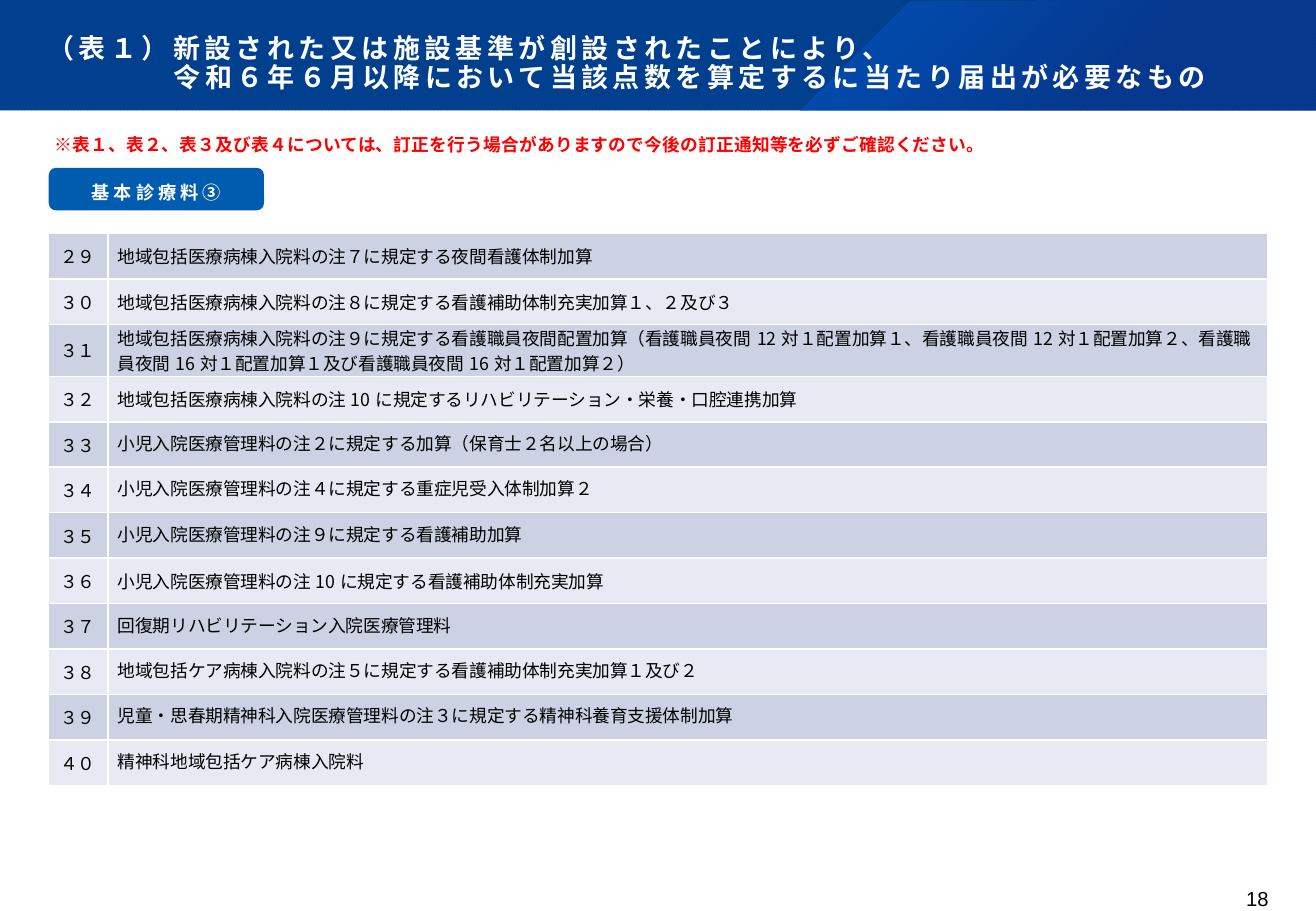
from lxml.etree import SubElement
from pptx import Presentation
from pptx.dml.color import RGBColor
from pptx.enum.dml import MSO_PATTERN
from pptx.enum.shapes import MSO_SHAPE
from pptx.enum.text import MSO_ANCHOR, MSO_AUTO_SIZE, PP_ALIGN
from pptx.oxml import parse_xml
from pptx.oxml.ns import nsdecls, qn
from pptx.util import Cm, Pt

WHITE = RGBColor(0xFF, 0xFF, 0xFF)
BLACK = RGBColor(0, 0, 0)
RED = RGBColor(0xFF, 0, 0)
BAND_DARK = RGBColor(0x00, 0x35, 0x79)
BAND_BLUE = RGBColor(0x00, 0x42, 0x92)
LABEL_BLUE = RGBColor(0x00, 0x5C, 0xAF)
ROW_FILLS = (RGBColor(0xCC, 0xD2, 0xE3), RGBColor(0xE7, 0xEA, 0xF2))

NOTO = "Noto Sans CJK JP"
KARLA = "Karla"
WIDTH, HEIGHT, BAND_HEIGHT = Cm(27.51), Cm(19.05), Cm(2.31)

FIRST_NUMBER = 29
LINE_CAPACITY = 65
WIDE_DIGITS = str.maketrans("0123456789", "０１２３４５６７８９")
ITEMS = [
    [("地域包括医療病棟入院料の注７に規定する夜間看護体制加算", NOTO)],
    [("地域包括医療病棟入院料の注８に規定する看護補助体制充実加算１、２及び３", NOTO)],
    [("地域包括医療病棟入院料の注９に規定する看護職員夜間配置加算"
      "（看護職員夜間12対１配置加算１、看護職員夜間12対１配置加算２、"
      "看護職員夜間16対１配置加算１及び看護職員夜間16対１配置加算２）", NOTO)],
    [("地域包括医療病棟入院料の注", KARLA), ("10", NOTO),
     ("に規定するリハビリテーション・栄養・口腔連携加算", KARLA)],
    [("小児入院医療管理料の注２に規定する加算（保育士２名以上の場合）", KARLA)],
    [("小児入院医療管理料の注４に規定する重症児受入体制加算２", KARLA)],
    [("小児入院医療管理料の注９に規定する看護補助加算", KARLA)],
    [("小児入院医療管理料の注", KARLA), ("10", NOTO),
     ("に規定する看護補助体制充実加算", KARLA)],
    [("回復期リハビリテーション入院医療管理料", KARLA)],
    [("地域包括ケア病棟入院料の注５に規定する看護補助体制充実加算１及び２", KARLA)],
    [("児童・思春期精神科入院医療管理料の注３に規定する精神科養育支援体制加算", KARLA)],
    [("精神科地域包括ケア病棟入院料", KARLA)],
]


def add_run(paragraph, text, size, face, color, bold=False, spacing=0):
    run = paragraph.add_run()
    run.text = text
    font = run.font
    font.size, font.name, font.bold = Pt(size), face, bold
    font.color.rgb = color
    properties = run._r.get_or_add_rPr()
    SubElement(properties, qn("a:ea")).set("typeface", face)
    if spacing:
        properties.set("spc", str(round(spacing * 100)))


def set_margins(frame, left, top, right, bottom):
    frame.margin_left, frame.margin_top = Cm(left), Cm(top)
    frame.margin_right, frame.margin_bottom = Cm(right), Cm(bottom)


def add_band(slide):
    band = slide.shapes.add_shape(MSO_SHAPE.RECTANGLE, 0, 0, WIDTH, BAND_HEIGHT)
    band.shadow.inherit = False
    band.fill.patterned()
    band.fill.pattern = MSO_PATTERN.DARK_UPWARD_DIAGONAL
    band.fill.fore_color.rgb = BAND_DARK
    band.fill.back_color.rgb = BAND_BLUE
    band.line.fill.background()

    outline = slide.shapes.build_freeform(Cm(19.02), Cm(0.03))
    outline.add_line_segments(
        [(WIDTH, 0), (WIDTH, BAND_HEIGHT), (Cm(16.71), BAND_HEIGHT)], close=True)
    glow = outline.convert_to_shape()
    glow.shadow.inherit = False
    glow.line.fill.background()
    gradient = parse_xml(
        f'<a:gradFill {nsdecls("a")} rotWithShape="1"><a:gsLst>'
        '<a:gs pos="0"><a:srgbClr val="0064DF"><a:alpha val="50000"/></a:srgbClr></a:gs>'
        '<a:gs pos="62000"><a:srgbClr val="0C338E"><a:alpha val="55000"/></a:srgbClr></a:gs>'
        '</a:gsLst><a:path path="circle"><a:fillToRect r="100000" b="100000"/></a:path>'
        '</a:gradFill>')
    glow._element.spPr.find(qn("a:custGeom")).addnext(gradient)


def place_title(slide):
    title = slide.shapes.title
    slide.shapes._spTree.append(title._element)
    title.left, title.top, title.width, title.height = 0, 0, WIDTH, BAND_HEIGHT
    frame = title.text_frame
    frame.auto_size = MSO_AUTO_SIZE.NONE
    frame.word_wrap = True
    frame.vertical_anchor = MSO_ANCHOR.BOTTOM
    set_margins(frame, 0.99, 0.91, 0.91, 0.36)
    paragraph = frame.paragraphs[0]
    paragraph.alignment = PP_ALIGN.LEFT
    paragraph.line_spacing = 0.9
    hanging = Cm(2.64)
    properties = paragraph._p.get_or_add_pPr()
    properties.set("marL", str(hanging))
    properties.set("indent", str(-hanging))
    style = (16, KARLA, WHITE, True, 2.7)
    add_run(paragraph, "（表１）新設された又は施設基準が創設されたことにより、", *style)
    paragraph.add_line_break()
    add_run(paragraph, "令和６年６月以降において当該点数を算定するに当たり届出が必要なもの", *style)


def add_text(slide, box, margins, align, text, style):
    frame = slide.shapes.add_textbox(*map(Cm, box)).text_frame
    frame.word_wrap = True
    set_margins(frame, *margins)
    paragraph = frame.paragraphs[0]
    paragraph.alignment = align
    add_run(paragraph, text, *style)


def add_label(slide, text):
    label = slide.shapes.add_shape(
        MSO_SHAPE.ROUNDED_RECTANGLE, Cm(1.02), Cm(3.51), Cm(4.5), Cm(0.89))
    label.adjustments[0] = 0.17
    label.shadow.inherit = False
    label.fill.solid()
    label.fill.fore_color.rgb = LABEL_BLUE
    label.line.fill.background()
    frame = label.text_frame
    frame.vertical_anchor = MSO_ANCHOR.MIDDLE
    paragraph = frame.paragraphs[0]
    paragraph.alignment = PP_ALIGN.CENTER
    paragraph.line_spacing = 1.3
    paragraph.space_after = Pt(8)
    add_run(paragraph, text, 10.8, NOTO, WHITE, True, 2.4)


def fill_cell(cell, runs, align, color):
    properties = cell._tc.get_or_add_tcPr()
    for side in ("lnL", "lnR", "lnT", "lnB"):
        properties.append(parse_xml(
            f'<a:{side} {nsdecls("a")} w="12700"><a:solidFill>'
            f'<a:srgbClr val="{WHITE}"/></a:solidFill></a:{side}>'))
    cell.fill.solid()
    cell.fill.fore_color.rgb = color
    cell.vertical_anchor = MSO_ANCHOR.MIDDLE
    set_margins(cell, 0.2, 0, 0.2, 0)
    paragraph = cell.text_frame.paragraphs[0]
    paragraph.alignment = align
    for text, face in runs:
        add_run(paragraph, text, 10.5, face, BLACK)


def row_height(runs):
    return Cm(1.09) if sum(len(text) for text, _ in runs) > LINE_CAPACITY else Cm(0.95)


def add_items(slide):
    items = slide.shapes.add_table(
        len(ITEMS), 2, Cm(1), Cm(4.88), Cm(25.5), sum(map(row_height, ITEMS))).table
    items.first_row = False
    items.columns[0].width = Cm(1.26)
    items.columns[1].width = Cm(24.24)
    for index, runs in enumerate(ITEMS):
        items.rows[index].height = row_height(runs)
        color = ROW_FILLS[index % 2]
        number = str(FIRST_NUMBER + index).translate(WIDE_DIGITS)
        fill_cell(items.cell(index, 0), [(number, NOTO)], PP_ALIGN.CENTER, color)
        fill_cell(items.cell(index, 1), runs, PP_ALIGN.LEFT, color)


def main():
    deck = Presentation()
    deck.slide_width, deck.slide_height = WIDTH, HEIGHT
    slide = deck.slides.add_slide(deck.slide_layouts[5])
    add_band(slide)
    place_title(slide)
    add_text(slide, (24.77, 18.54, 1.75, 0.76), (0, 0, 0, 0), PP_ALIGN.RIGHT,
             "18", (12, "Arial", BLACK))
    add_items(slide)
    add_label(slide, "基本診療料③")
    add_text(slide, (0.99, 2.72, 19.41, 0.61), (0.15, 0.08, 0.15, 0.08), PP_ALIGN.JUSTIFY,
             "※表１、表２、表３及び表４については、訂正を行う場合がありますので"
             "今後の訂正通知等を必ずご確認ください。", (10.5, NOTO, RED, True))
    deck.save("out.pptx")


if __name__ == "__main__":
    main()
